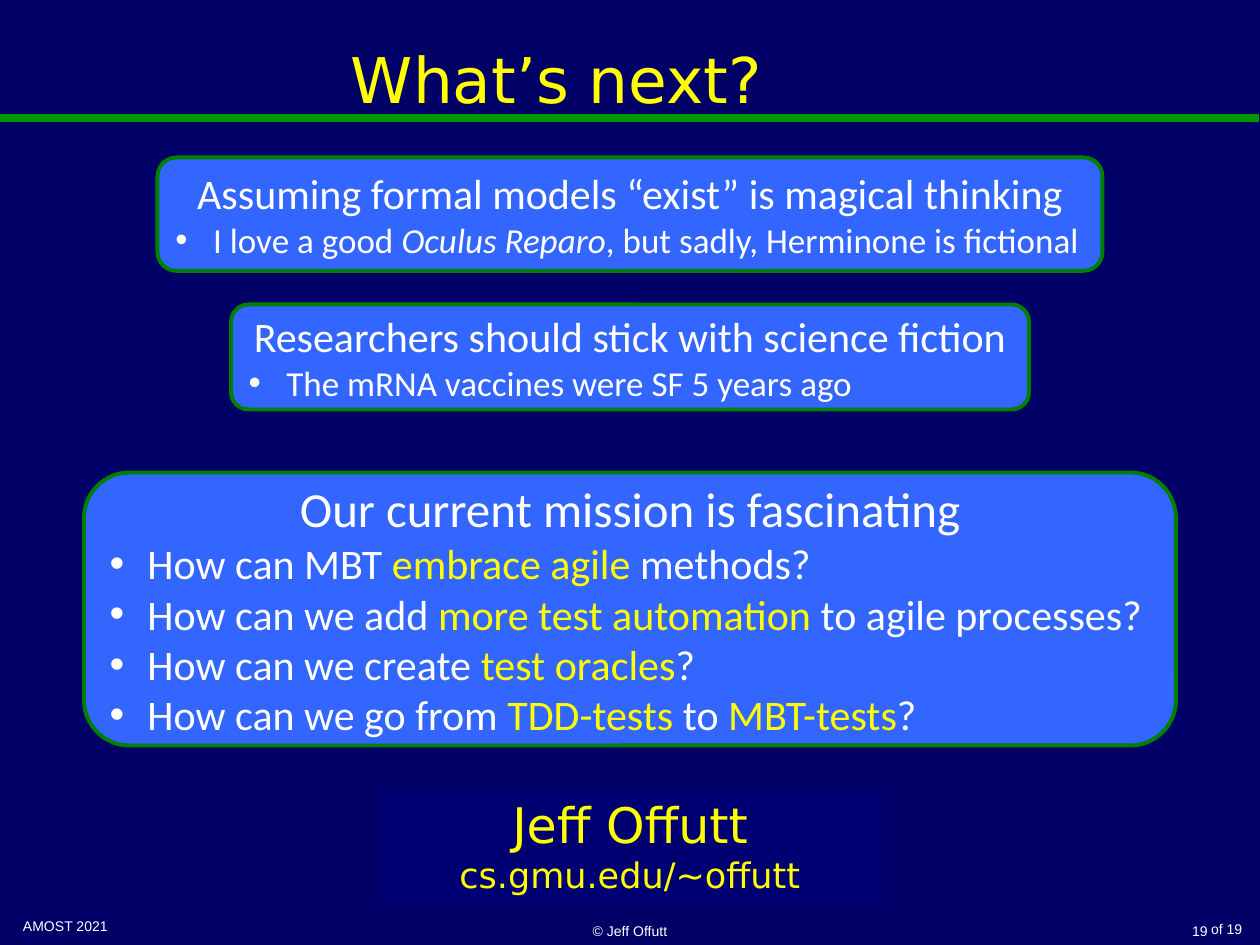
from lxml.etree import SubElement
from pptx import Presentation
from pptx.dml.color import RGBColor
from pptx.enum.shapes import MSO_CONNECTOR, MSO_SHAPE
from pptx.enum.text import MSO_ANCHOR, PP_ALIGN
from pptx.oxml.ns import qn
from pptx.util import Inches, Pt

NAVY, DEEP_BLUE, BLUE = "000066", "000073", "3366FF"
GREEN, RULE_GREEN = "008000", "009900"
YELLOW, WHITE = "FFFF00", "FFFFFF"
BODY_FONT, TITLE_FONT, FOOTER_FONT = "Calibri", "DejaVu Sans", "Arial"
CENTER, LEFT, RIGHT = PP_ALIGN.CENTER, PP_ALIGN.LEFT, PP_ALIGN.RIGHT
TOP, MIDDLE, BOTTOM = MSO_ANCHOR.TOP, MSO_ANCHOR.MIDDLE, MSO_ANCHOR.BOTTOM


def color(value):
    return RGBColor.from_string(value)


def grid(steps):
    """Columns and rows are both a twelfth of an inch."""
    return Inches(steps / 12)


class SlideBuilder:
    def __init__(self, slide):
        self.slide = slide
        slide.background.fill.solid()
        slide.background.fill.fore_color.rgb = color(NAVY)

    def rule(self, row, width, weight):
        connector = self.slide.shapes.add_connector(
            MSO_CONNECTOR.STRAIGHT, 0, grid(row), grid(width), grid(row))
        connector.line.color.rgb = color(RULE_GREEN)
        connector.line.width = Pt(weight)
        SubElement(connector.element.spPr, qn("a:effectLst"))

    def add_runs(self, paragraph, runs, size, font, fill, align):
        """Add runs: plain strings, or (text, "italic" or a colour)."""
        paragraph.alignment = align
        for part in runs:
            text, mark = part if isinstance(part, tuple) else (part, None)
            run = paragraph.add_run()
            run.text = text
            run.font.name = font
            run.font.size = Pt(size)
            run.font.italic = mark == "italic"
            run.font.color.rgb = color(fill if mark in (None, "italic") else mark)

    def text(self, box, words, size, font, fill, align, anchor, left_margin=0.1):
        shape = self.slide.shapes.add_textbox(*map(grid, box))
        frame = shape.text_frame
        frame.word_wrap = True
        frame.vertical_anchor = anchor
        frame.margin_left = Inches(left_margin)
        self.add_runs(frame.paragraphs[0], [words], size, font, fill, align)

    def panel(self, kind, box, fill, heading, size, font, text_color, border=None):
        shape = self.slide.shapes.add_shape(kind, *map(grid, box))
        shape.shadow.inherit = False
        shape.fill.solid()
        shape.fill.fore_color.rgb = color(fill)
        if border:
            shape.line.color.rgb = color(border)
            shape.line.width = Pt(2.25)
        else:
            shape.line.fill.background()
        frame = shape.text_frame
        frame.word_wrap = True
        frame.vertical_anchor = MIDDLE
        self.add_runs(frame.paragraphs[0], [heading], size, font, text_color, CENTER)
        return frame

    def bullet_panel(self, box, heading, size, bullets, bullet_size):
        frame = self.panel(MSO_SHAPE.ROUNDED_RECTANGLE, box, BLUE, heading,
                           size, BODY_FONT, WHITE, GREEN)
        for runs in bullets:
            paragraph = frame.add_paragraph()
            properties = paragraph._p.get_or_add_pPr()
            properties.set("marL", str(Inches(0.3)))
            properties.set("indent", str(Inches(-0.3)))
            SubElement(properties, qn("a:buFont"), typeface="Arial")
            SubElement(properties, qn("a:buChar"), char="•")
            self.add_runs(paragraph, runs, bullet_size, BODY_FONT, WHITE, LEFT)


def main():
    presentation = Presentation()
    presentation.slide_width, presentation.slide_height = grid(120), grid(90)
    builder = SlideBuilder(
        presentation.slides.add_slide(presentation.slide_layouts[6]))

    # Title and rule
    builder.rule(11.2, 119.9, 4.5)
    builder.text((1, 0, 104, 15), "What’s next?", 36, TITLE_FONT, YELLOW,
                 CENTER, MIDDLE)

    # Statements
    builder.bullet_panel(
        (15, 15, 90, 10.8), "Assuming formal models “exist” is magical thinking", 24,
        [["I love a good ", ("Oculus Reparo", "italic"),
          ", but sadly, Herminone is fictional"]], 20)
    builder.bullet_panel(
        (22, 29, 76, 10), "Researchers should stick with science fiction", 24,
        [["The mRNA vaccines were SF 5 years ago"]], 20)
    builder.bullet_panel(
        (8, 45, 104, 26), "Our current mission is fascinating", 28,
        [["How can MBT ", ("embrace agile", YELLOW), " methods?"],
         ["How can we add ", ("more test automation ", YELLOW),
          "to agile processes?"],
         ["How can we create ", ("test oracles", YELLOW), "?"],
         ["How can we go from ", ("TDD-tests", YELLOW), " to ",
          ("MBT-tests", YELLOW), "?"]], 24)

    # Speaker
    speaker = builder.panel(MSO_SHAPE.RECTANGLE, (36, 75, 48, 11), DEEP_BLUE,
                            "Jeff Offutt", 28, TITLE_FONT, YELLOW)
    builder.add_runs(speaker.add_paragraph(), ["cs.gmu.edu/~offutt"], 20,
                     TITLE_FONT, YELLOW, CENTER)

    # Footer
    for box, words, align, anchor, left_margin in (
            ((1, 86.8, 28, 3.1), "AMOST 2021", LEFT, TOP, 0.1),
            ((41, 86.8, 38, 3.2), "© Jeff Offutt", CENTER, BOTTOM, 0.1),
            ((94.5, 86.8, 21.7, 3.2), "19", RIGHT, BOTTOM, 0.1),
            ((114, 87.1, 5.5, 2.9), "of 19", RIGHT, TOP, 0)):
        builder.text(box, words, 8, FOOTER_FONT, WHITE, align, anchor, left_margin)

    presentation.save("out.pptx")


if __name__ == "__main__":
    main()
